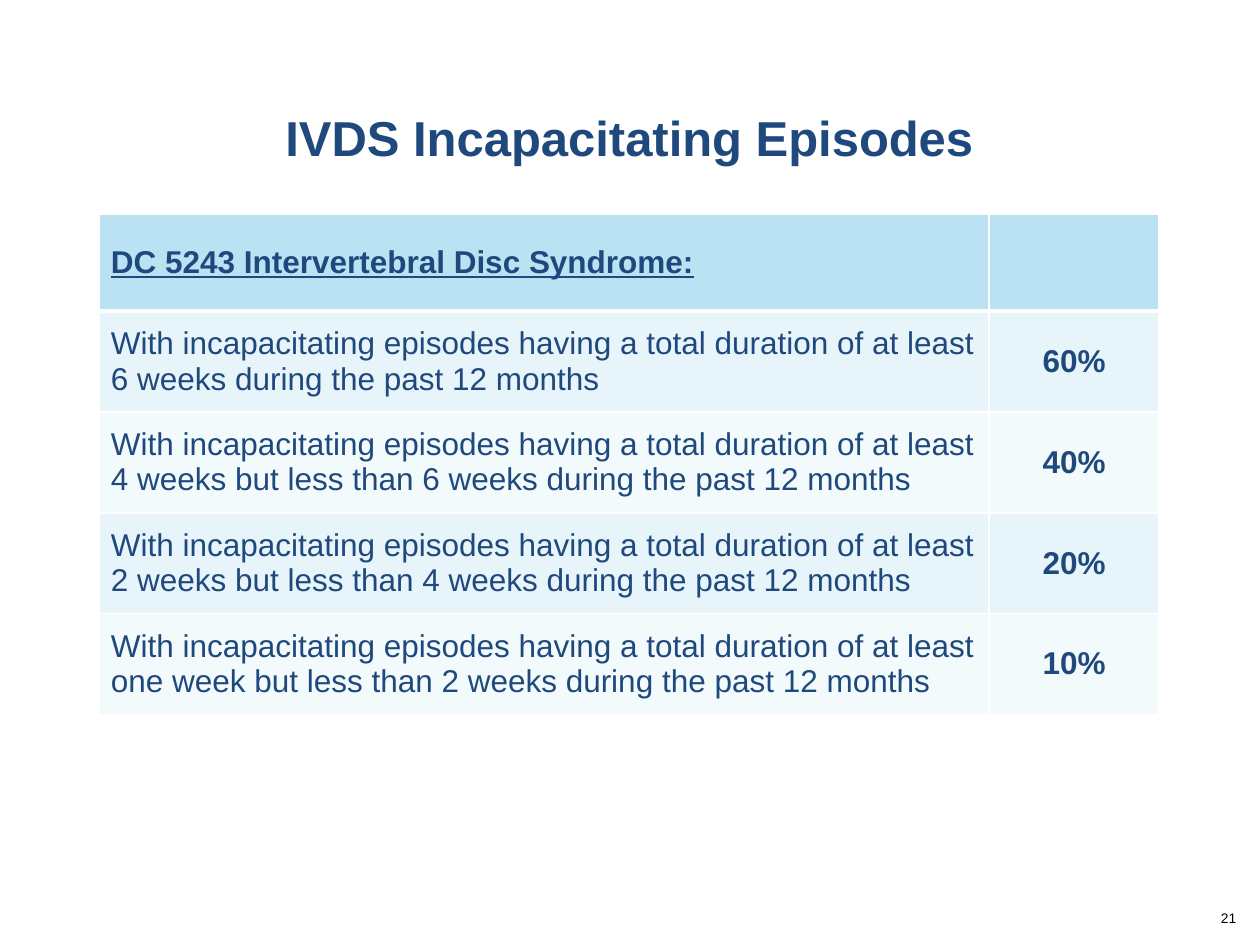
from lxml.etree import SubElement
from pptx import Presentation
from pptx.dml.color import RGBColor
from pptx.enum.text import MSO_ANCHOR, PP_ALIGN
from pptx.oxml.ns import qn
from pptx.util import Inches, Pt

NAVY = "1F497D"
WHITE = "FFFFFF"
HEADER_FILL = "BBE2F2"
BAND_FILLS = ("E7F4FA", "F3FAFC")

HEADING = "DC 5243 Intervertebral Disc Syndrome:"
DURATIONS = [
    ("6 weeks", "60%"),
    ("4 weeks but less than 6 weeks", "40%"),
    ("2 weeks but less than 4 weeks", "20%"),
    ("one week but less than 2 weeks", "10%"),
]


def color(hex_value):
    return RGBColor.from_string(hex_value)


def write(frame, text, size=18, ink=NAVY, bold=False, underline=False,
          align=PP_ALIGN.LEFT, font="Arial"):
    paragraph = frame.paragraphs[0]
    paragraph.alignment = align
    run = paragraph.add_run()
    run.text = text
    run.font.name = font
    run.font.size = Pt(size)
    run.font.bold = bold
    run.font.underline = underline
    run.font.color.rgb = color(ink)


def add_borders(cell, bottom=1, top=1):
    properties = cell._tc.get_or_add_tcPr()
    for side, width in (("L", 1), ("R", 1), ("T", top), ("B", bottom)):
        line = SubElement(properties, qn(f"a:ln{side}"), w=str(Pt(width)))
        fill = SubElement(line, qn("a:solidFill"))
        SubElement(fill, qn("a:srgbClr"), val=WHITE)


class RatingSlide:
    def __init__(self, deck):
        self.slide = deck.slides.add_slide(deck.slide_layouts[5])
        background = self.slide.background.fill
        background.solid()
        background.fore_color.rgb = color(WHITE)

    def title(self, text, left, top, width, height):
        heading = self.slide.shapes.title
        heading.left, heading.top = Inches(left), Inches(top)
        heading.width, heading.height = Inches(width), Inches(height)
        heading.text_frame.vertical_anchor = MSO_ANCHOR.MIDDLE
        write(heading.text_frame, text, size=28, bold=True, align=PP_ALIGN.CENTER)

    def page_number(self, text, left, top, width, height):
        frame = self.slide.shapes.add_textbox(
            Inches(left), Inches(top), Inches(width), Inches(height)).text_frame
        frame.word_wrap = True
        frame.margin_top = 0
        write(frame, text, size=7.9, ink="000000", align=PP_ALIGN.RIGHT)

    def table(self, heading, ratings, left, top, widths, heights):
        grid = self.slide.shapes.add_table(
            len(heights), len(widths), Inches(left), Inches(top),
            Inches(sum(widths)), Inches(sum(heights))).table
        for column, width in zip(grid.columns, widths):
            column.width = Inches(width)
        for row, height in zip(grid.rows, heights):
            row.height = Inches(height)

        for column, text in enumerate((heading, "")):
            self.cell(grid.cell(0, column), text, HEADER_FILL, bottom=3,
                      bold=True, underline=True)
        for row, (criterion, percent) in enumerate(ratings, 1):
            band = BAND_FILLS[(row - 1) % 2]
            top_border = 3 if row == 1 else 1
            self.cell(grid.cell(row, 0), criterion, band, top=top_border)
            self.cell(grid.cell(row, 1), percent, band, top=top_border,
                      bold=True, align=PP_ALIGN.CENTER)

    def cell(self, cell, text, fill, top=1, bottom=1, **style):
        cell.vertical_anchor = MSO_ANCHOR.MIDDLE
        cell.margin_left = Inches(0.09)
        cell.margin_right = Inches(0.09)
        add_borders(cell, bottom, top)
        cell.fill.solid()
        cell.fill.fore_color.rgb = color(fill)
        if text:
            write(cell.text_frame, text, **style)


def main():
    deck = Presentation()
    deck.slide_width, deck.slide_height = Inches(10), Inches(7.5)
    page = RatingSlide(deck)
    page.title("IVDS Incapacitating Episodes", 0.08, 0.5, 9.83, 1.17)
    page.page_number("21", 7.58, 7.22, 2.33, 0.4)
    ratings = [
        (f"With incapacitating episodes having a total duration of at least "
         f"{duration} during the past 12 months", percent)
        for duration, percent in DURATIONS
    ]
    page.table(HEADING, ratings, 0.79, 1.7, (7.06, 1.35),
               [0.77] + [0.8] * len(ratings))
    deck.save("out.pptx")


if __name__ == "__main__":
    main()
